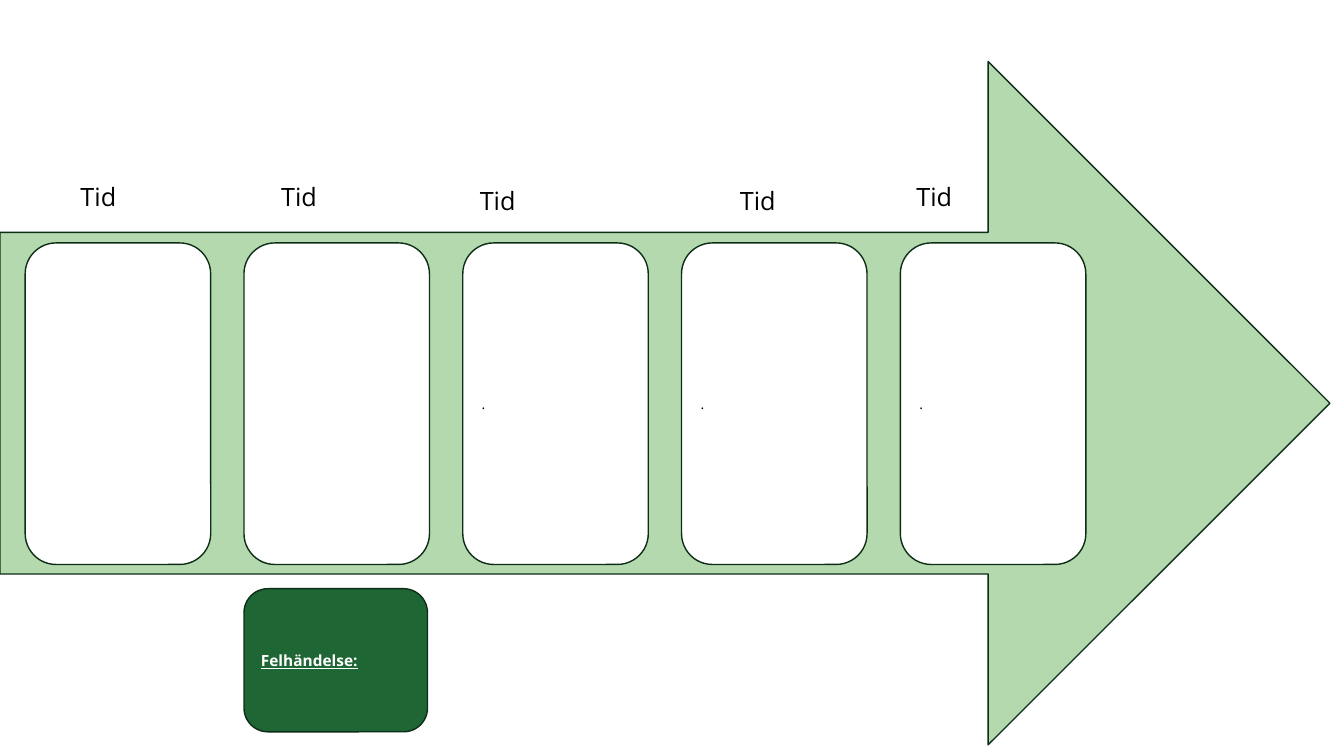
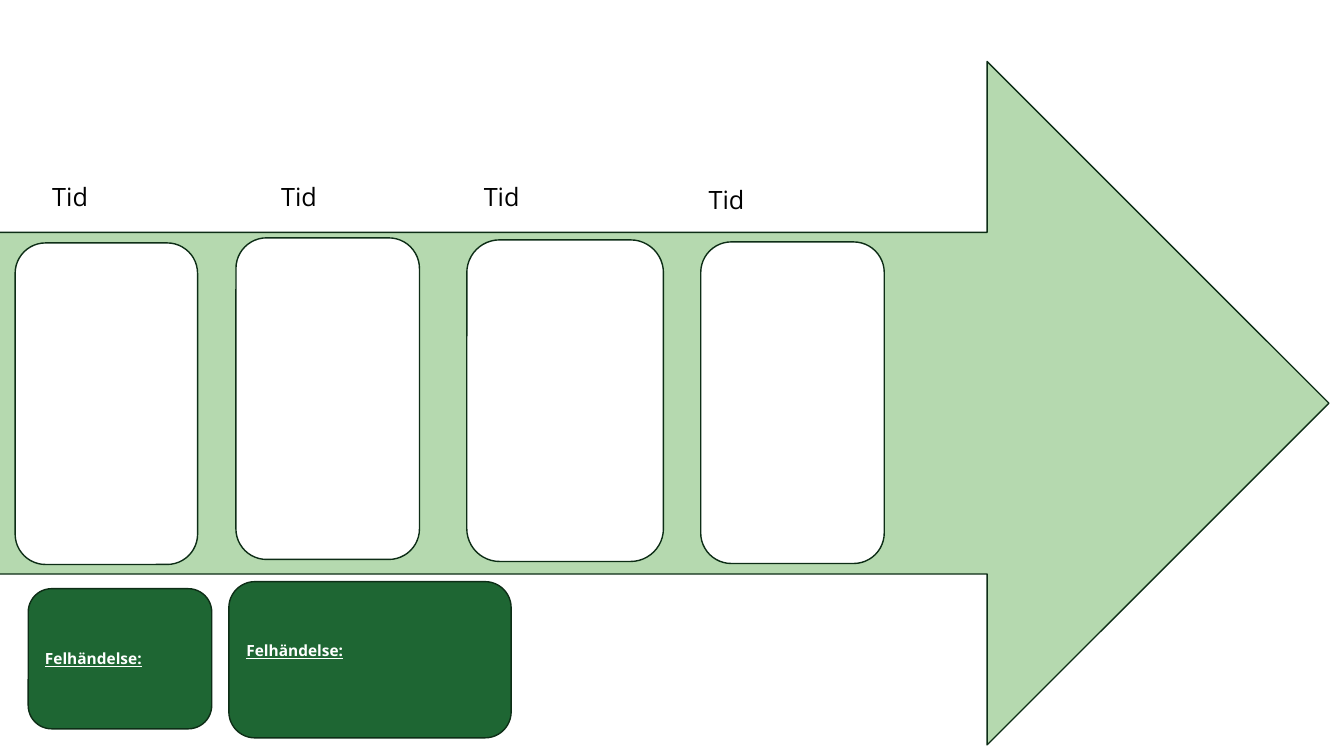
from dataclasses import dataclass

from pptx import Presentation
from pptx.dml.color import RGBColor
from pptx.enum.shapes import MSO_SHAPE
from pptx.enum.text import MSO_ANCHOR, MSO_AUTO_SIZE, PP_ALIGN
from pptx.util import Inches, Pt


@dataclass(frozen=True)
class Theme:
    font: str = "Open Sans"
    arrow: RGBColor = RGBColor(0xB5, 0xD9, 0xAF)
    outline: RGBColor = RGBColor(0x0D, 0x2D, 0x16)
    fault: RGBColor = RGBColor(0x1E, 0x66, 0x33)
    white: RGBColor = RGBColor(0xFF, 0xFF, 0xFF)
    black: RGBColor = RGBColor(0x00, 0x00, 0x00)
    time_size: Pt = Pt(18)
    fault_size: Pt = Pt(11)
    event_size: Pt = Pt(10)
    line_width: Pt = Pt(1)


@dataclass(frozen=True)
class Box:
    left: float
    top: float
    width: float
    height: float

    def inside(self, left, top, width, height):
        return Box(self.left + left, self.top + top, width, height)

    def lengths(self):
        return [Inches(n) for n in (self.left, self.top, self.width, self.height)]


THEME = Theme()
CARD_HEIGHT = 3.19
TIME_HEIGHT = 0.4


def write(frame, text, size, color, emphasis=False):
    frame.word_wrap = True
    frame.text = text
    paragraph = frame.paragraphs[0]
    paragraph.alignment = PP_ALIGN.LEFT
    for run in paragraph.runs:
        run.font.name = THEME.font
        run.font.size = size
        run.font.color.rgb = color
        run.font.bold = emphasis
        run.font.underline = emphasis


def add_outlined(slide, preset, box, fill):
    shape = slide.shapes.add_shape(preset, *box.lengths())
    shape.shadow.inherit = False
    shape.fill.solid()
    shape.fill.fore_color.rgb = fill
    shape.line.color.rgb = THEME.outline
    shape.line.width = THEME.line_width
    return shape


def add_event(slide, box, text):
    event = add_outlined(slide, MSO_SHAPE.ROUNDED_RECTANGLE, box, THEME.white)
    if text:
        event.text_frame.vertical_anchor = MSO_ANCHOR.MIDDLE
        write(event.text_frame, text, THEME.event_size, THEME.black)


def add_fault(slide, box, lift):
    fault = add_outlined(slide, MSO_SHAPE.ROUNDED_RECTANGLE, box, THEME.fault)
    frame = fault.text_frame
    frame.vertical_anchor = MSO_ANCHOR.MIDDLE
    frame.margin_bottom = Inches(0.05 + lift)
    write(frame, "Felhändelse:", THEME.fault_size, THEME.white, emphasis=True)


def add_time(slide, box):
    frame = slide.shapes.add_textbox(*box.lengths()).text_frame
    write(frame, "Tid", THEME.time_size, THEME.black)
    frame.auto_size = MSO_AUTO_SIZE.SHAPE_TO_FIT_TEXT


def add_timeline(prs, box, events, times, faults):
    slide = prs.slides.add_slide(prs.slide_layouts[6])
    add_outlined(slide, MSO_SHAPE.RIGHT_ARROW, box, THEME.arrow)
    for left, top, width, text in events:
        add_event(slide, box.inside(left, top, width, CARD_HEIGHT), text)
    for left, top, width in times:
        add_time(slide, box.inside(left, top, width, TIME_HEIGHT))
    for left, top, width, height, lift in faults:
        add_fault(slide, box.inside(left, top, width, height), lift)


def main():
    prs = Presentation()
    prs.slide_width, prs.slide_height = Inches(13.33), Inches(7.5)

    add_timeline(
        prs,
        Box(0, 0.61, 13.19, 6.78),
        events=[(0.25 + 2.17 * i, 1.8, 1.84, text)
                for i, text in enumerate(["", "", ".", ".", "."])],
        times=[(0.7, 1.14, 0.94), (2.69, 1.14, 1.31), (4.66, 1.18, 1.72),
               (7.24, 1.18, 1.03), (8.99, 1.14, 1.72)],
        faults=[(2.42, 5.23, 1.82, 1.42, 0)],
    )
    add_timeline(
        prs,
        Box(-0.01, 0.61, 13.19, 6.78),
        events=[(0.16, 1.8, 1.81, ""), (2.35, 1.75, 1.82, ""),
                (4.64, 1.77, 1.95, ""), (6.96, 1.79, 1.82, "")],
        times=[(0.43, 1.14, 1.54), (2.7, 1.14, 1.31),
               (4.71, 1.14, 1.31), (6.94, 1.17, 1.31)],
        faults=[(0.29, 5.23, 1.82, 1.39, 0), (2.28, 5.16, 2.8, 1.55, 0.19)],
    )
    prs.save("out.pptx")


if __name__ == "__main__":
    main()
